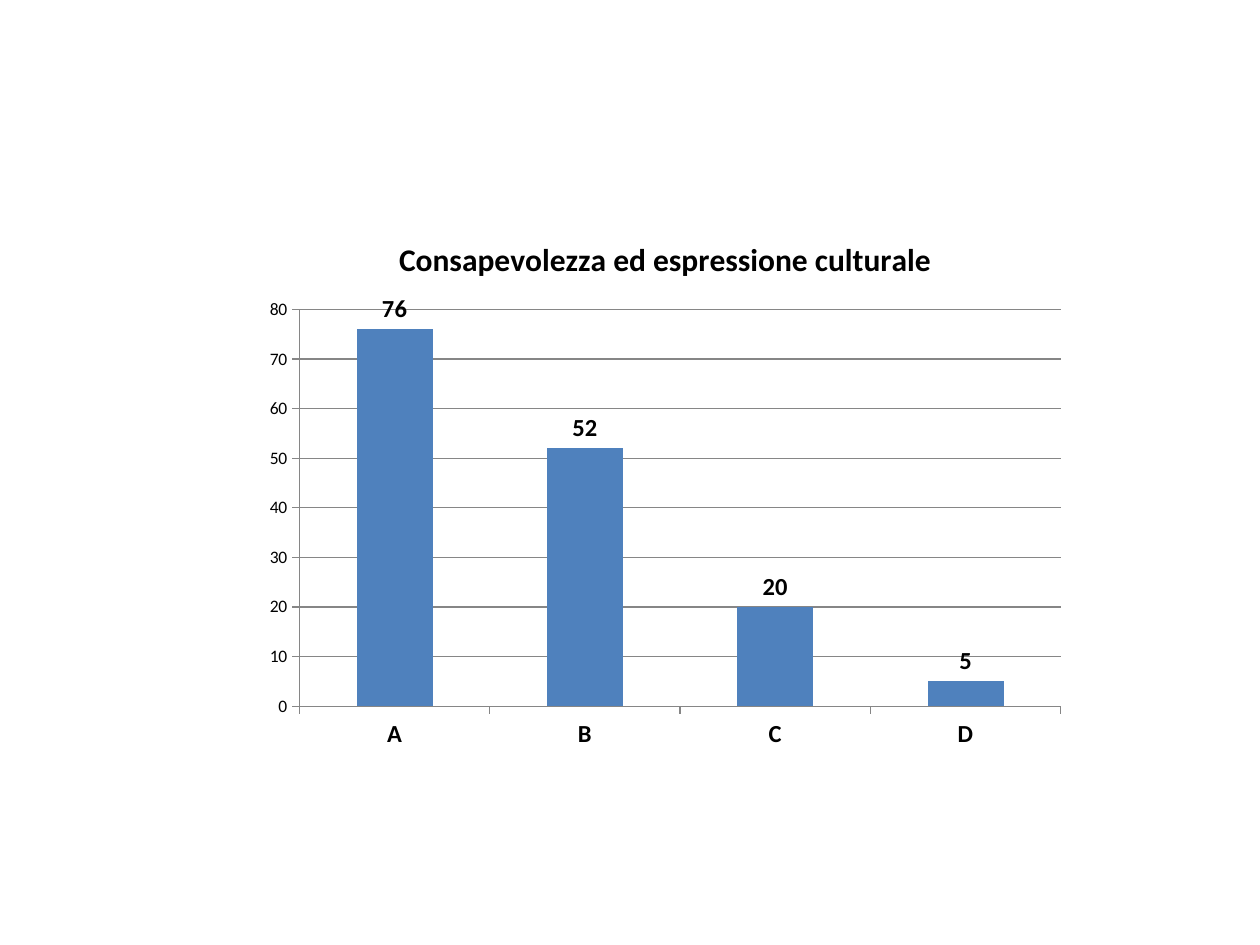
from pptx import Presentation
from pptx.chart.data import CategoryChartData
from pptx.dml.color import RGBColor
from pptx.enum.chart import XL_CHART_TYPE, XL_LABEL_POSITION, XL_TICK_MARK
from pptx.util import Inches, Pt

# Content
TITLE = "Consapevolezza ed espressione culturale"
RESULTS = {"A": 76, "B": 52, "C": 20, "D": 5}

# Style
FONT = "Calibri"
BLACK = RGBColor(0x00, 0x00, 0x00)
GRAY = RGBColor(0x86, 0x86, 0x86)
BLUE = RGBColor(0x4F, 0x81, 0xBD)


def style_font(font, size, bold=False):
    font.name = FONT
    font.size = Pt(size)
    font.bold = bold
    font.color.rgb = BLACK


def style_line(line):
    line.color.rgb = GRAY
    line.width = Pt(0.75)


deck = Presentation()
deck.slide_width, deck.slide_height = Inches(10), Inches(7.5)
page = deck.slides.add_slide(deck.slide_layouts[6])

# Column chart
data = CategoryChartData()
data.categories = list(RESULTS)
data.add_series(TITLE, list(RESULTS.values()))
chart = page.shapes.add_chart(
    XL_CHART_TYPE.COLUMN_CLUSTERED,
    Inches(2.01), Inches(1.7), Inches(6.54), Inches(4.33), data,
).chart
style_font(chart.font, 10)
chart.has_legend = False

# Chart title
chart.has_title = True
chart.chart_title.include_in_layout = False
heading = chart.chart_title.text_frame
heading.text = TITLE
style_font(heading.paragraphs[0].font, 18, bold=True)

# Axes
for axis in (chart.category_axis, chart.value_axis):
    axis.major_tick_mark = XL_TICK_MARK.OUTSIDE
    axis.minor_tick_mark = XL_TICK_MARK.NONE
    style_line(axis.format.line)
style_font(chart.category_axis.tick_labels.font, 14, bold=True)
scale = chart.value_axis
scale.minimum_scale, scale.maximum_scale, scale.major_unit = 0, 80, 10
scale.has_major_gridlines = True
style_line(scale.major_gridlines.format.line)

# Columns and value labels
plot = chart.plots[0]
plot.gap_width = 150
plot.vary_by_categories = False
columns = plot.series[0]
columns.format.fill.solid()
columns.format.fill.fore_color.rgb = BLUE
labels = columns.data_labels
labels.show_value = True
labels.position = XL_LABEL_POSITION.OUTSIDE_END
style_font(labels.font, 14, bold=True)

deck.save("out.pptx")
